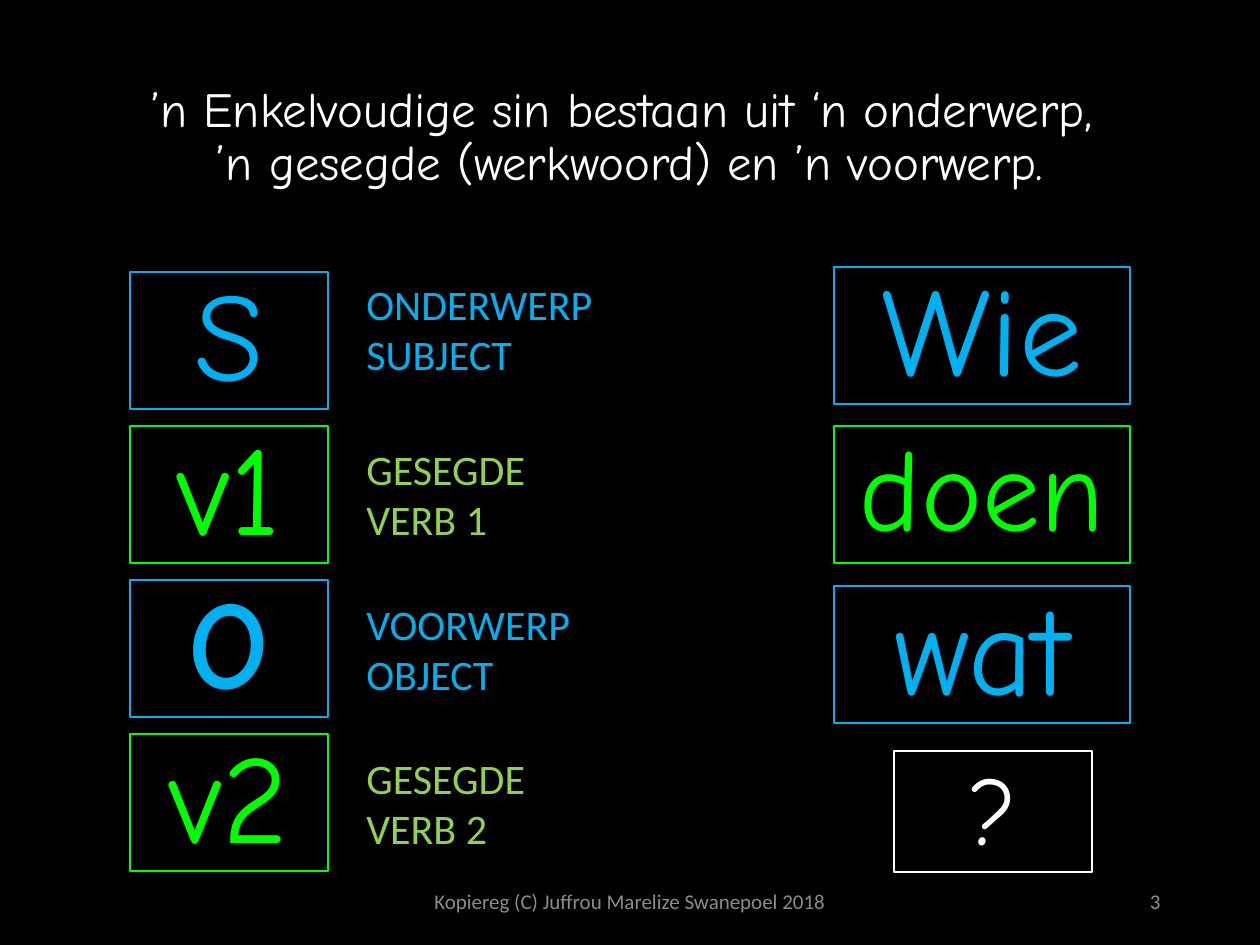
from pptx import Presentation, util as u
from pptx.dml.color import RGBColor
from pptx.enum import shapes, text

BLACK = RGBColor(0, 0, 0)
WHITE = RGBColor(255, 255, 255)
BLUE = RGBColor(0x00, 0xB0, 0xF0)
GREEN = RGBColor(0x00, 0xFF, 0x00)
LIME = RGBColor(0x92, 0xD0, 0x50)
GRAY = RGBColor(0x8C, 0x8C, 0x8C)
HAND, SANS = "Comic Neue", "Calibri"
LEFT, MID, RIGHT = text.PP_ALIGN.LEFT, text.PP_ALIGN.CENTER, text.PP_ALIGN.RIGHT
TOP, HALF = text.MSO_ANCHOR.TOP, text.MSO_ANCHOR.MIDDLE
PX = u.Inches(1) / 126


def write(shape, words, size, font, color, align=MID, anchor=HALF, pad=None):
    frame = shape.text_frame
    frame.text = words
    frame.word_wrap = True
    frame.auto_size = text.MSO_AUTO_SIZE.NONE
    frame.vertical_anchor = anchor
    if pad:
        frame.margin_left = frame.margin_right = pad
        frame.margin_top = frame.margin_bottom = pad
    for para in frame.paragraphs:
        para.alignment = align
        para.line_spacing = 0.9 if font == HAND else 1.0
        for run in para.runs:
            run.font.size = u.Pt(size)
            run.font.name = font
            run.font.bold = False
            run.font.color.rgb = color


def place(*box):
    return [u.Emu(round(n * PX)) for n in box]


deck = Presentation()
deck.slide_width, deck.slide_height = place(1260, 945)
slide = deck.slides.add_slide(deck.slide_layouts[5])
slide.background.fill.solid()
slide.background.fill.fore_color.rgb = BLACK
pad = u.Inches(0.1)

# Title
title = slide.shapes.title
title.left, title.top, title.width, title.height = place(43, 73, 1174, 137)
write(title, "’n Enkelvoudige sin bestaan uit ‘n onderwerp, \n"
      "’n gesegde (werkwoord) en ’n voorwerp.", 28, HAND, WHITE, MID, TOP, pad)

# Framed letters on the left, question words on the right
cards = [(word, 130, 272 + 154 * i, 198, 137, 72, color)
         for i, (word, color) in enumerate(
             [("S", BLUE), ("v1", GREEN), ("O", BLUE), ("v2", GREEN)])]
cards += [
    ("Wie", 834, 267, 296, 137, 72, BLUE),
    ("doen", 834, 426, 296, 137, 66, GREEN),
    ("wat", 834, 586, 296, 137, 72, BLUE),
    ("?", 894, 751, 198, 121, 54, WHITE),
]
for word, x, y, w, h, size, color in cards:
    card = slide.shapes.add_shape(shapes.MSO_SHAPE.RECTANGLE, *place(x, y, w, h))
    card.shadow.inherit = False
    card.fill.solid()
    card.fill.fore_color.rgb = BLACK
    card.line.color.rgb = color
    card.line.width = u.Pt(0.75)
    write(card, word, size, HAND, color, MID, TOP if word == "?" else HALF, pad)
    if word == "O":
        card.text_frame.paragraphs[0].runs[0].font.bold = True

# Names of the sentence parts
for words, y, color in [
    ("ONDERWERP\nSUBJECT", 272, BLUE),
    ("GESEGDE\nVERB 1", 437, LIME),
    ("VOORWERP\nOBJECT", 592, BLUE),
    ("GESEGDE\nVERB 2", 746, LIME),
]:
    label = slide.shapes.add_textbox(*place(354, y, 499, 115))
    write(label, words, 24, SANS, color, LEFT, TOP)

# Footer and page number
for words, x, w, align in [
    ("Kopiereg (C) Juffrou Marelize Swanepoel 2018", 417, 426, MID),
    ("3", 890, 283, RIGHT),
]:
    foot = slide.shapes.add_textbox(*place(x, 876, w, 50))
    write(foot, words, 12, SANS, GRAY, align)

deck.save("out.pptx")
